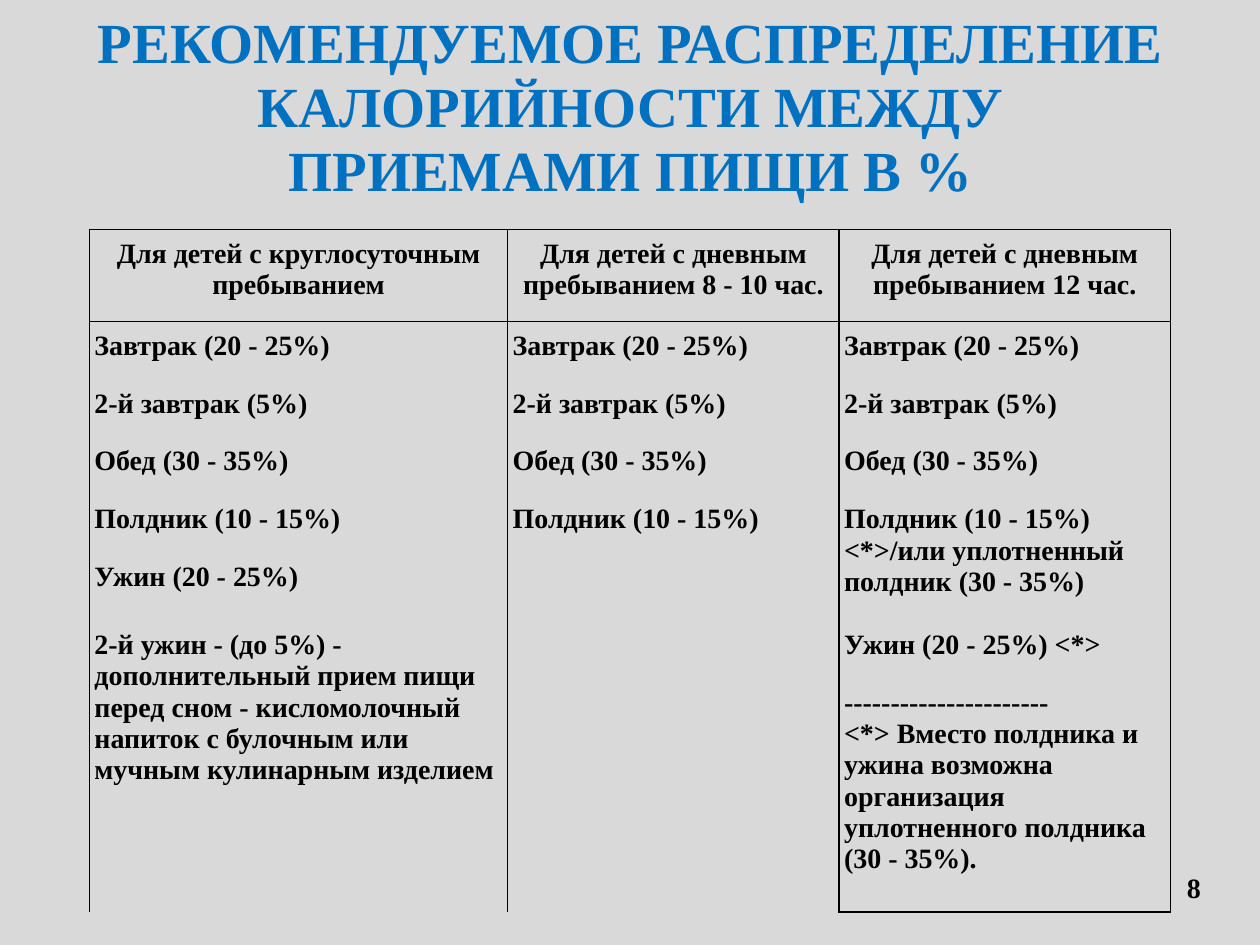
from lxml.etree import SubElement
from pptx import Presentation
from pptx.dml.color import RGBColor
from pptx.enum.text import MSO_ANCHOR as ANCHOR, PP_ALIGN as ALIGN
from pptx.oxml.ns import qn
from pptx.util import Inches, Pt

# Content
TITLE = "РЕКОМЕНДУЕМОЕ РАСПРЕДЕЛЕНИЕ КАЛОРИЙНОСТИ МЕЖДУ ПРИЕМАМИ ПИЩИ В %"
PAGE = "8"
HEADS = ["Для детей с круглосуточным пребыванием",
         "Для детей с дневным пребыванием 8 - 10 час.",
         "Для детей с дневным пребыванием 12 час."]
COMMON = ["Завтрак (20 - 25%)", "2-й завтрак (5%)", "Обед (30 - 35%)"]
SNACK = "Полдник (10 - 15%)"
SUPPER = "Ужин (20 - 25%)"
# One list of meals per column: (text, rows spanned)
MEALS = [
    [(SNACK, 1), (SUPPER, 1),
     ("2-й ужин - (до 5%) - дополнительный прием пищи перед сном - "
      "кисломолочный напиток с булочным или мучным кулинарным изделием", 2)],
    [(SNACK, 4)],
    [(SNACK + " <*>/или уплотненный полдник (30 - 35%)", 2),
     (SUPPER + " <*>", 1),
     ("----------------------\n<*> Вместо полдника и ужина возможна "
      "организация уплотненного полдника (30 - 35%).", 1)],
]

# Layout
W, H = 10, 7.5
COLS = [3.32, 2.63, 2.63]
ROWS = [0.73, 0.46, 0.46, 0.46, 0.46, 0.54, 0.46, 1.85]
LAST = len(ROWS) - 1
FONT = "Times New Roman"
C = {"bg": "D9D9D9", "title": "0070C0", "text": "000000"}


def style(p, size, color, align):
    p.alignment = align
    for r in p.runs:
        r.font.name, r.font.size, r.font.bold = FONT, Pt(size), True
        r.font.color.rgb = RGBColor.from_string(C[color])


def add_text(s, box, text, size, color, align):
    tf = s.shapes.add_textbox(*map(Inches, box)).text_frame
    tf.word_wrap, tf.vertical_anchor = True, ANCHOR.MIDDLE
    tf.text = text
    style(tf.paragraphs[0], size, color, align)
    return tf.paragraphs[0]


def set_borders(cell, sides):
    tc_pr = cell._tc.get_or_add_tcPr()
    for side in "LRTB":
        ln = SubElement(tc_pr, qn(f"a:ln{side}"), w=str(Pt(1)))
        if side in sides:
            fill = SubElement(ln, qn("a:solidFill"))
            SubElement(fill, qn("a:srgbClr"), val=C["text"])
        else:
            SubElement(ln, qn("a:noFill"))
    cell.fill.background()


def fill_cell(cell, text, align):
    cell.margin_left = cell.margin_right = Inches(0.04)
    cell.margin_top = cell.margin_bottom = Inches(0.07)
    cell.text_frame.text = text
    for p in cell.text_frame.paragraphs:
        style(p, 16, "text", align)


def add_meal_table(s, left, top):
    box = map(Inches, (left, top, sum(COLS), sum(ROWS)))
    table = s.shapes.add_table(len(ROWS), len(COLS), *box).table
    table.first_row = table.horz_banding = False
    for col, width in zip(table.columns, COLS):
        col.width = Inches(width)
    for row, height in zip(table.rows, ROWS):
        row.height = Inches(height)

    # Lines around the header and around each column of meals
    for i in range(len(ROWS)):
        sides = "LR" + "T" * (i <= 1) + "B" * (i in (0, LAST))
        for j in range(len(COLS)):
            set_borders(table.cell(i, j), sides)

    # Text, with merged cells where a meal spans several rows
    for j, (head, meals) in enumerate(zip(HEADS, MEALS)):
        fill_cell(table.cell(0, j), head, ALIGN.CENTER)
        i = 1
        for text, span in [(meal, 1) for meal in COMMON] + meals:
            cell = table.cell(i, j)
            if span > 1:
                cell.merge(table.cell(i + span - 1, j))
            fill_cell(cell, text, ALIGN.LEFT)
            i += span


def main():
    prs = Presentation()
    prs.slide_width, prs.slide_height = Inches(W), Inches(H)
    s = prs.slides.add_slide(prs.slide_layouts[6])
    s.background.fill.solid()
    s.background.fill.fore_color.rgb = RGBColor.from_string(C["bg"])

    # Title
    p = add_text(s, (0.61, 0.12, 8.79, 1.48), TITLE, 32.4, "title", ALIGN.CENTER)
    p.line_spacing = 0.94

    # Table and page number
    add_meal_table(s, 0.71, 1.82)
    add_text(s, (8.23, 6.84, 1.4, 0.4), PAGE, 16, "text", ALIGN.RIGHT)
    prs.save("out.pptx")


if __name__ == "__main__":
    main()
